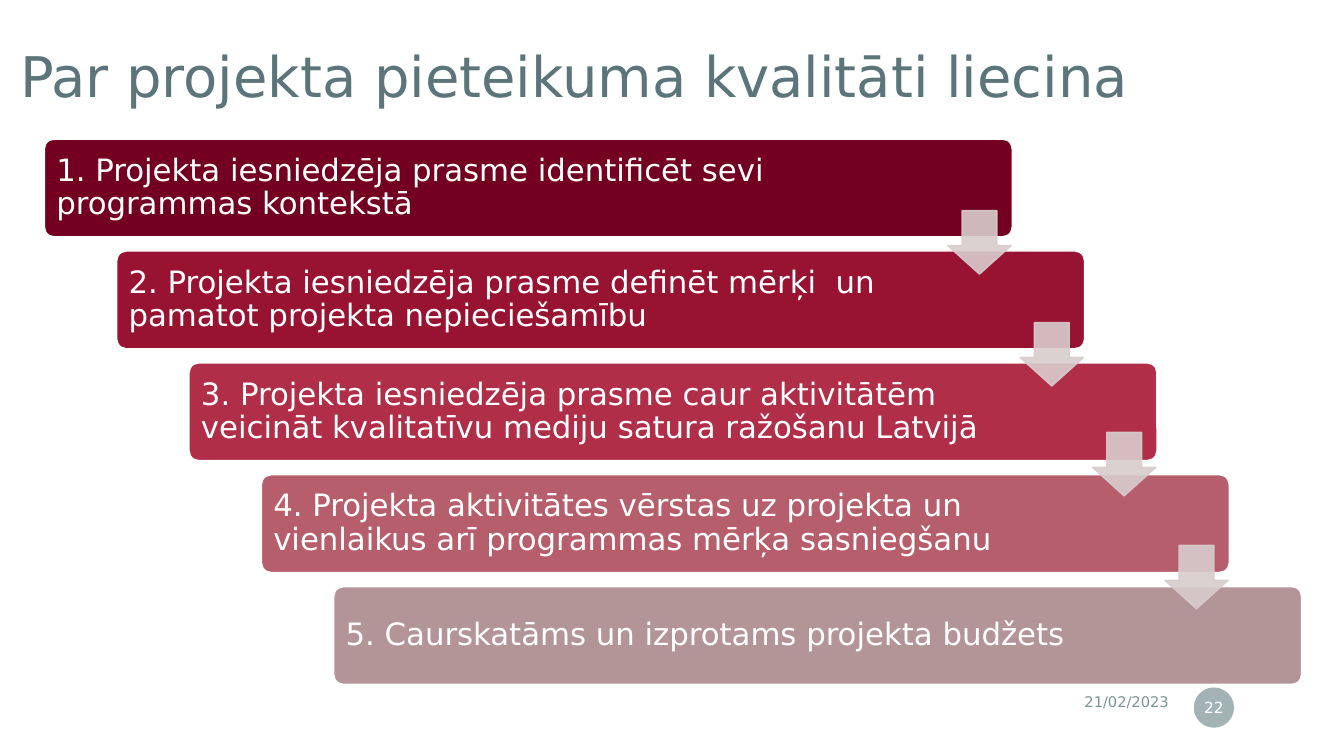
import pptx
import pptx.util
import pptx.dml.color
import pptx.enum.shapes
import pptx.enum.text
from lxml import etree

Inches, Pt = pptx.util.Inches, pptx.util.Pt
SHAPE = pptx.enum.shapes.MSO_SHAPE
ALIGN = pptx.enum.text.PP_ALIGN

# Content
TITLE = "Par projekta pieteikuma kvalitāti liecina"
DATE = "21/02/2023"
PAGE = "22"
STEPS = [
    ("1. Projekta iesniedzēja prasme identificēt sevi programmas kontekstā", "740021"),
    ("2. Projekta iesniedzēja prasme definēt mērķi  un pamatot projekta nepieciešamību", "981231"),
    ("3. Projekta iesniedzēja prasme caur aktivitātēm veicināt kvalitatīvu mediju satura ražošanu Latvijā", "B02E47"),
    ("4. Projekta aktivitātes vērstas uz projekta un vienlaikus arī programmas mērķa sasniegšanu", "B65E6B"),
    ("5. Caurskatāms un izprotams projekta budžets", "B39598"),
]
ARROW_TOPS = [2.09, 3.2, 4.29, 5.41]

# Staircase geometry, in inches
FIRST_LEFT, LAST_LEFT = 0.44, 3.31
FIRST_TOP, STEP_Y = 1.38, 1.11
STEP_X = (LAST_LEFT - FIRST_LEFT) / (len(STEPS) - 1)
BAR_W, BAR_H = 9.6, 0.97
ARROW_LEFT, ARROW_SIZE = 9.4, 0.63


def paint(fill, color, alpha=None):
    fill.solid()
    fill.fore_color.rgb = pptx.dml.color.RGBColor.from_string(color)
    if alpha:
        clr = fill._xPr.find(".//" + pptx.oxml.ns.qn("a:srgbClr"))
        etree.SubElement(clr, pptx.oxml.ns.qn("a:alpha"), val=str(alpha * 1000))


def add_shape(kind, box, color, alpha=None, line=None, adj=()):
    sp = s.shapes.add_shape(kind, *map(Inches, box))
    sp.shadow.inherit = False
    for i, value in enumerate(adj):
        sp.adjustments[i] = value
    paint(sp.fill, color, alpha)
    if line:
        paint(sp.line.fill, line, alpha)
        sp.line.width = Pt(1)
    else:
        sp.line.fill.background()
    return sp


def add_textbox(box):
    return s.shapes.add_textbox(*map(Inches, box))


def write(sp, text, size, color, align=ALIGN.LEFT, insets=(0.1, 0.05, 0.1, 0.05), spacing=1.0):
    tf = sp.text_frame
    tf.word_wrap = True
    tf.vertical_anchor = pptx.enum.text.MSO_ANCHOR.MIDDLE
    tf.margin_left, tf.margin_top, tf.margin_right, tf.margin_bottom = map(Inches, insets)
    p = tf.paragraphs[0]
    p.text = text
    p.alignment = align
    p.line_spacing = spacing
    p.font.name = "DejaVu Sans"
    p.font.size = Pt(size)
    p.font.color.rgb = pptx.dml.color.RGBColor.from_string(color)


prs = pptx.Presentation()
prs.slide_width, prs.slide_height = Inches(13.33), Inches(7.5)
s = prs.slides.add_slide(prs.slide_layouts[6])

# Title, date and page number
write(add_textbox((0, 0.19, 11.97, 1.19)), TITLE, 40, "5B757A",
      insets=(0.2,) * 4, spacing=0.9)
write(add_textbox((8.68, 6.79, 3.01, 0.35)), DATE, 10.5, "7C9396", ALIGN.RIGHT)
badge = add_shape(SHAPE.OVAL, (11.84, 6.82, 0.4, 0.4), "7C9396", alpha=70)
write(badge, PAGE, 11, "FFFFFF", ALIGN.CENTER, (0.02, 0.05, 0.02, 0.05))

# Bars
for i, (text, color) in enumerate(STEPS):
    box = (FIRST_LEFT + i * STEP_X, FIRST_TOP + i * STEP_Y, BAR_W, BAR_H)
    bar = add_shape(SHAPE.ROUNDED_RECTANGLE, box, color, line="FFFFFF", adj=(0.1,))
    write(bar, text, 22, "FFFFFF", insets=(0.09, 0.09, 1.44, 0.09), spacing=0.9)

# Arrows between bars
for i, top in enumerate(ARROW_TOPS):
    box = (ARROW_LEFT + i * STEP_X, top, ARROW_SIZE, ARROW_SIZE)
    add_shape(SHAPE.DOWN_ARROW, box, "D8CCCD", alpha=90, line="D8CCCD", adj=(0.55, 0.45))

prs.save("out.pptx")
